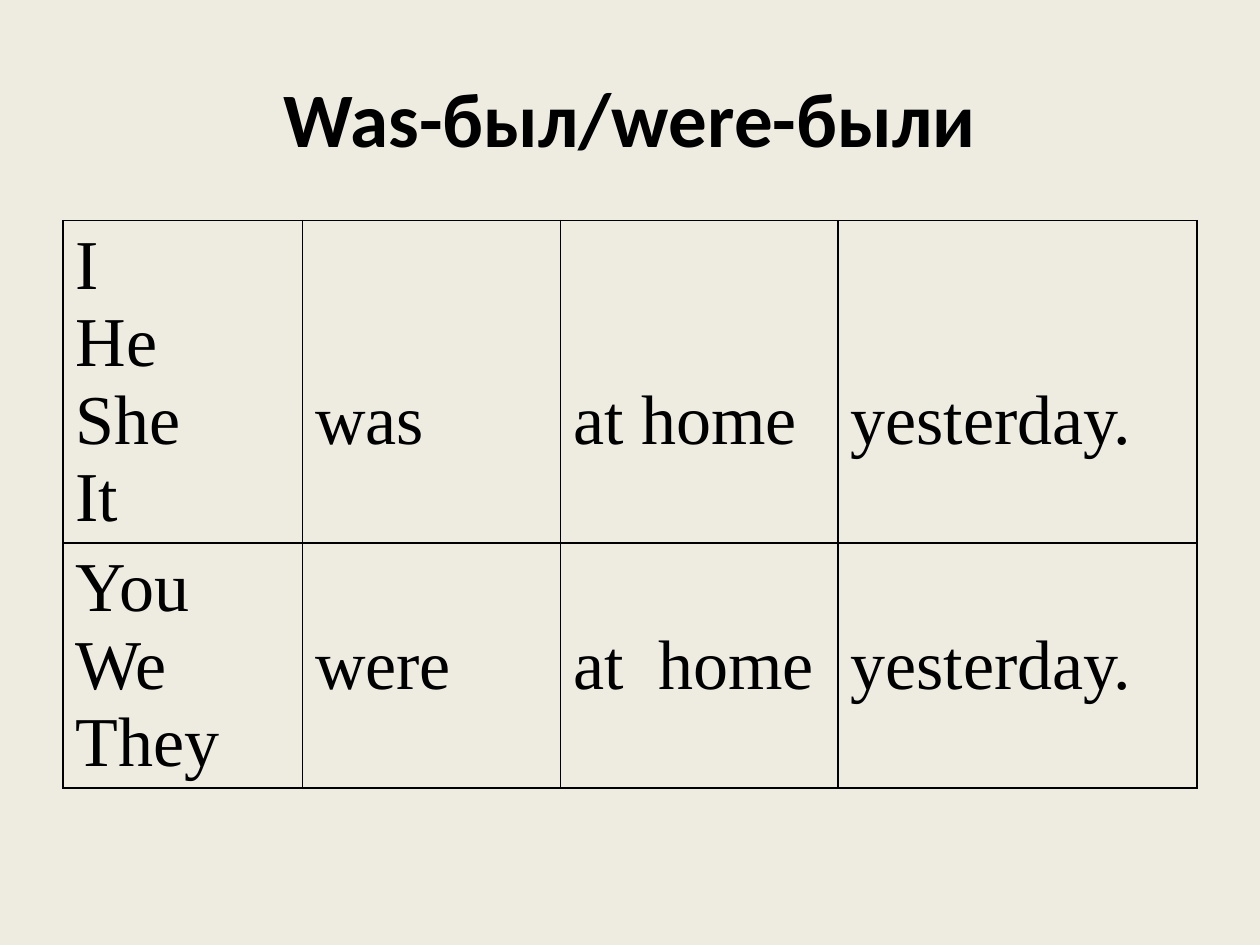
from lxml.etree import SubElement
from pptx import Presentation
from pptx.dml.color import RGBColor as Rgb
from pptx.enum.text import MSO_ANCHOR as Anchor, PP_ALIGN as Align
from pptx.oxml.ns import qn
from pptx.util import Inches, Pt

WIDE, HIGH = 10, 7.5
EDGE = 0.05 * WIDE
COLS = [1.9, 2.05, 2.2, 2.85]
LINE = 0.615  # height of one line of table text
PAD = 0.05
INK, PAPER = "000000", "EEECE1"

# Each row: pronouns, the other cells, and how many lines those sit lower
ROWS = [
    (["I", "He", "She", "It"], ["was", "at home", "yesterday."], 2),
    (["You", "We", "They"], ["were", "at  home", "yesterday."], 1),
]


def color(code):
    return Rgb.from_string(code)


def add_run(para, text, font, size, bold=False):
    run = para.add_run()
    run.text = text
    run.font.name = font
    run.font.size = Pt(size)
    run.font.bold = bold
    run.font.color.rgb = color(INK)


def set_title(slide, text):
    title = slide.shapes.title
    title.left, title.top = Inches(EDGE), Inches(0.04 * HIGH)
    title.width, title.height = Inches(WIDE - 2 * EDGE), Inches(HIGH / 6)
    frame = title.text_frame
    frame.word_wrap = True
    frame.vertical_anchor = Anchor.MIDDLE
    para = frame.paragraphs[0]
    para.alignment = Align.CENTER
    add_run(para, text, "Calibri", 44, True)


def add_borders(cell):
    props = cell._tc.get_or_add_tcPr()
    for side in ("a:lnL", "a:lnR", "a:lnT", "a:lnB"):
        line = SubElement(props, qn(side), w=str(Pt(1)))
        fill = SubElement(line, qn("a:solidFill"))
        SubElement(fill, qn("a:srgbClr"), val=INK)


def fill_cell(cell, words, drop=0):
    add_borders(cell)  # borders come before the fill in the XML
    cell.fill.background()
    cell.margin_top = Inches(PAD + drop * LINE)
    cell.margin_bottom = Inches(PAD)
    frame = cell.text_frame
    for i, word in enumerate(words):
        para = frame.add_paragraph() if i else frame.paragraphs[0]
        add_run(para, word, "Times New Roman", 40)


def add_grid(slide):
    highs = [len(names) * LINE + 2 * PAD for names, _, _ in ROWS]
    frame = slide.shapes.add_table(
        len(ROWS), len(COLS), Inches(EDGE), Inches(1.75),
        Inches(sum(COLS)), Inches(sum(highs)))
    table = frame.table
    table.first_row = table.horz_banding = False
    for col, width in zip(table.columns, COLS):
        col.width = Inches(width)
    for r, (names, rest, drop) in enumerate(ROWS):
        table.rows[r].height = Inches(highs[r])
        fill_cell(table.cell(r, 0), names)
        for c, word in enumerate(rest, 1):
            fill_cell(table.cell(r, c), [word], drop)


def main():
    deck = Presentation()
    deck.slide_width, deck.slide_height = Inches(WIDE), Inches(HIGH)
    slide = deck.slides.add_slide(deck.slide_layouts[5])
    # Background
    back = slide.background.fill
    back.solid()
    back.fore_color.rgb = color(PAPER)
    # Content
    set_title(slide, "Was-был/were-были")
    add_grid(slide)
    deck.save("out.pptx")


if __name__ == "__main__":
    main()
